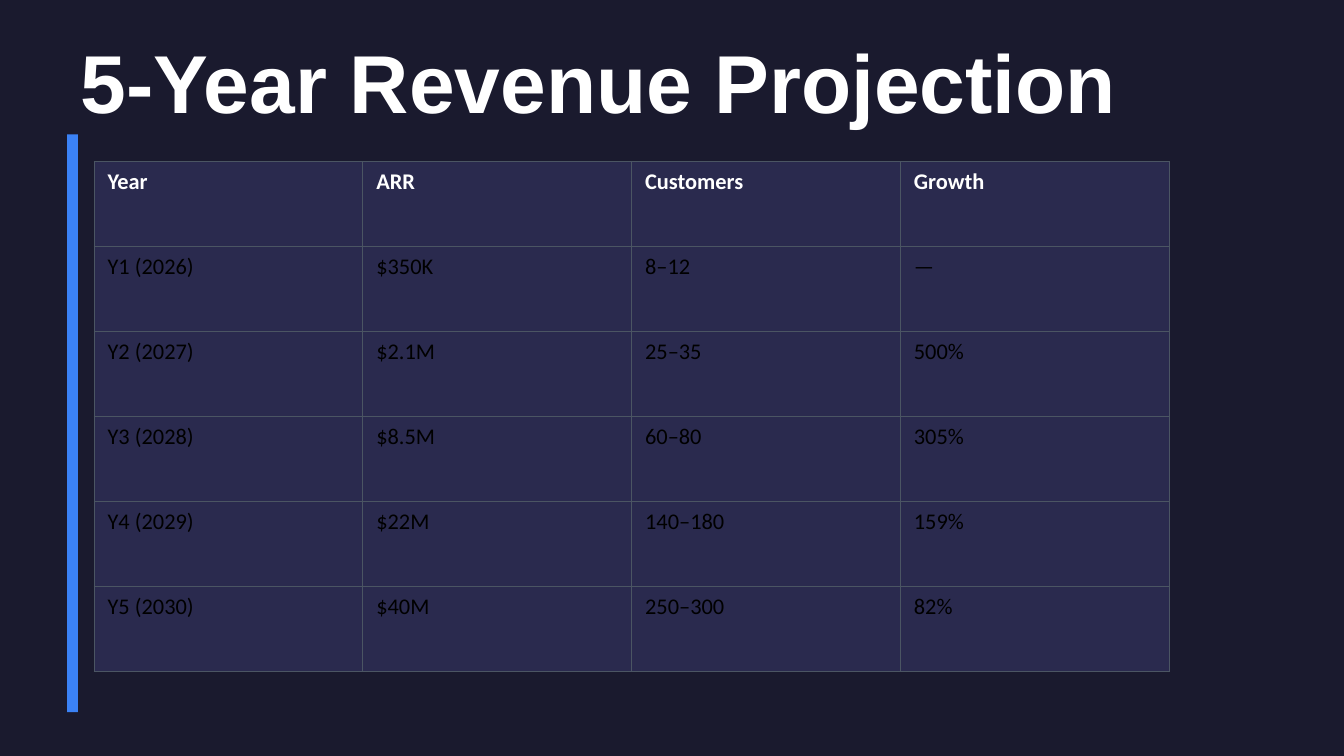
from dataclasses import dataclass

from lxml.etree import SubElement
from pptx import Presentation
from pptx.dml.color import RGBColor as RGB
from pptx.enum.shapes import MSO_SHAPE as Shape
from pptx.enum.text import MSO_ANCHOR as Anchor, PP_ALIGN as Align
from pptx.oxml.ns import qn
from pptx.util import Inches, Pt


@dataclass(frozen=True)
class Theme:
    background: str = "1A1A2E"
    cell: str = "2A2A4E"
    border: str = "4B5563"
    accent: str = "3B82F6"
    light: str = "FFFFFF"
    dark: str = "000000"
    title_font: str = "Arial"
    table_font: str = "Calibri"
    title_size: float = 44
    table_size: float = 12
    border_width: float = 0.5


THEME = Theme()
TITLE_LAYOUT = 5
COLUMN_WIDTH = 2

PROJECTION = [
    ("Year", "ARR", "Customers", "Growth"),
    ("Y1 (2026)", "$350K", "8–12", "—"),
    ("Y2 (2027)", "$2.1M", "25–35", "500%"),
    ("Y3 (2028)", "$8.5M", "60–80", "305%"),
    ("Y4 (2029)", "$22M", "140–180", "159%"),
    ("Y5 (2030)", "$40M", "250–300", "82%"),
]


def write_text(frame, text, *, font, size, color, bold=False, align=Align.LEFT):
    paragraph = frame.paragraphs[0]
    paragraph.alignment = align
    run = paragraph.add_run()
    run.text = text
    run.font.name = font
    run.font.size = Pt(size)
    run.font.bold = bold
    run.font.color.rgb = RGB.from_string(color)


def set_fill(fill, color):
    fill.solid()
    fill.fore_color.rgb = RGB.from_string(color)


def set_borders(cell, color, width):
    """Line all four sides; the lines must come before the cell's fill."""
    properties = cell._tc.get_or_add_tcPr()
    for side in ("a:lnL", "a:lnR", "a:lnT", "a:lnB"):
        line = SubElement(properties, qn(side), w=str(Pt(width)))
        solid = SubElement(line, qn("a:solidFill"))
        SubElement(solid, qn("a:srgbClr"), val=color)


def place_title(slide, text, left, top, width, height):
    title = slide.shapes.title
    title.left, title.top = Inches(left), Inches(top)
    title.width, title.height = Inches(width), Inches(height)
    frame = title.text_frame
    frame.word_wrap = True
    frame.vertical_anchor = Anchor.MIDDLE
    write_text(frame, text, font=THEME.title_font, size=THEME.title_size,
               color=THEME.light, bold=True)


def add_accent_bar(slide, left, top, width, height):
    bar = slide.shapes.add_shape(Shape.RECTANGLE, Inches(left), Inches(top),
                                 Inches(width), Inches(height))
    bar.shadow.inherit = False
    set_fill(bar.fill, THEME.accent)
    bar.line.fill.background()


def add_projection_table(slide, rows, left, top, height):
    column_count = len(rows[0])
    table = slide.shapes.add_table(
        len(rows), column_count, Inches(left), Inches(top),
        Inches(COLUMN_WIDTH * column_count), Inches(height)).table
    table.horz_banding = False
    for row_index, values in enumerate(rows):
        is_header = row_index == 0
        for column_index, value in enumerate(values):
            cell = table.cell(row_index, column_index)
            set_borders(cell, THEME.border, THEME.border_width)
            set_fill(cell.fill, THEME.cell)
            write_text(cell.text_frame, value, font=THEME.table_font,
                       size=THEME.table_size, bold=is_header,
                       color=THEME.light if is_header else THEME.dark)


def build_projection_slide(presentation):
    slide = presentation.slides.add_slide(presentation.slide_layouts[TITLE_LAYOUT])
    set_fill(slide.background.fill, THEME.background)
    place_title(slide, "5-Year Revenue Projection", 0.5, 0.3, 9, 0.6)
    add_accent_bar(slide, 0.5, 1, 0.08, 4.3)
    add_projection_table(slide, PROJECTION, 0.7, 1.2, 3.8)


def main():
    presentation = Presentation()
    presentation.slide_width = Inches(10)
    presentation.slide_height = Inches(10 * 9 / 16)
    build_projection_slide(presentation)
    presentation.save("out.pptx")


if __name__ == "__main__":
    main()
